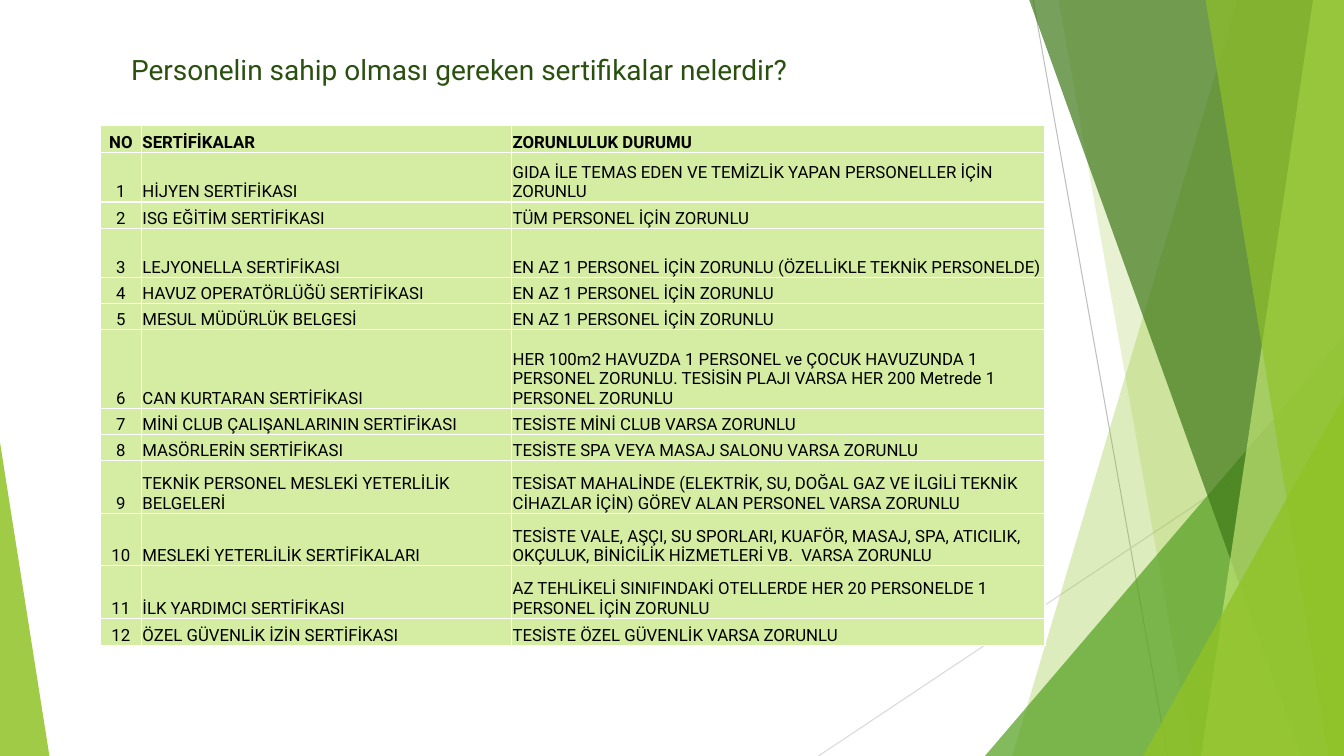
import lxml.etree
import pptx
import pptx.dml.color
import pptx.enum.shapes
import pptx.enum.text
import pptx.oxml.ns
import pptx.util

Pt = pptx.util.Pt
qn = pptx.oxml.ns.qn
PP_ALIGN = pptx.enum.text.PP_ALIGN
ANCHOR = pptx.enum.text.MSO_ANCHOR

WIDTH, HEIGHT = 960, 540
TOP = -0.6

CERTIFICATES = [
    ("NO", "SERTİFİKALAR", "ZORUNLULUK DURUMU", 19.4),
    ("1", "HİJYEN SERTİFİKASI",
     "GIDA İLE TEMAS EDEN VE TEMİZLİK YAPAN PERSONELLER İÇİN ZORUNLU", 35.3),
    ("2", "ISG EĞİTİM SERTİFİKASI", "TÜM PERSONEL İÇİN ZORUNLU", 18.7),
    ("3", "LEJYONELLA SERTİFİKASI",
     "EN AZ 1 PERSONEL İÇİN ZORUNLU (ÖZELLİKLE TEKNİK PERSONELDE)", 35.3),
    ("4", "HAVUZ OPERATÖRLÜĞÜ SERTİFİKASI", "EN AZ 1 PERSONEL İÇİN ZORUNLU", 18.7),
    ("5", "MESUL MÜDÜRLÜK BELGESİ", "EN AZ 1 PERSONEL İÇİN ZORUNLU", 18.7),
    ("6", "CAN KURTARAN SERTİFİKASI",
     "HER 100m2 HAVUZDA 1 PERSONEL ve ÇOCUK HAVUZUNDA 1 PERSONEL ZORUNLU. "
     "TESİSİN PLAJI VARSA HER 200 Metrede 1 PERSONEL ZORUNLU", 56.2),
    ("7", "MİNİ CLUB ÇALIŞANLARININ SERTİFİKASI",
     "TESİSTE MİNİ CLUB VARSA ZORUNLU", 18.7),
    ("8", "MASÖRLERİN SERTİFİKASI",
     "TESİSTE SPA VEYA MASAJ SALONU VARSA ZORUNLU", 18.7),
    ("9", "TEKNİK PERSONEL MESLEKİ YETERLİLİK BELGELERİ",
     "TESİSAT MAHALİNDE (ELEKTRİK, SU, DOĞAL GAZ VE İLGİLİ TEKNİK CİHAZLAR İÇİN) "
     "GÖREV ALAN PERSONEL VARSA ZORUNLU", 37.5),
    ("10", "MESLEKİ YETERLİLİK SERTİFİKALARI",
     "TESİSTE VALE, AŞÇI, SU SPORLARI, KUAFÖR, MASAJ, SPA, ATICILIK, OKÇULUK, "
     "BİNİCİLİK HİZMETLERİ VB.  VARSA ZORUNLU", 37.5),
    ("11", "İLK YARDIMCI SERTİFİKASI",
     "AZ TEHLİKELİ SINIFINDAKİ OTELLERDE HER 20 PERSONELDE 1 PERSONEL İÇİN ZORUNLU",
     37.5),
    ("12", "ÖZEL GÜVENLİK İZİN SERTİFİKASI", "TESİSTE ÖZEL GÜVENLİK VARSA ZORUNLU", 19.4),
]


def rgb(code):
    return pptx.dml.color.RGBColor.from_string(code)


def write(tf, text, size=12, color="000000", bold=False, align=PP_ALIGN.LEFT):
    p = tf.paragraphs[0]
    p.alignment = align
    r = p.add_run()
    r.text = text
    r.font.name = "Roboto"
    r.font.size = Pt(size)
    r.font.bold = bold
    r.font.color.rgb = rgb(color)


class Deck:
    """Hold the current slide and its green style."""

    green = "90C226"
    cell_fill = "D5EDA2"
    border = "FFFFFF"

    def __init__(self, slide):
        self.s = slide

    def line(self, x1, y1, x2, y2, color):
        kind = pptx.enum.shapes.MSO_CONNECTOR.STRAIGHT
        sp = self.s.shapes.add_connector(kind, Pt(x1), Pt(y1), Pt(x2), Pt(y2))
        sp.line.color.rgb = rgb(color)
        sp.line.width = Pt(0.75)
        lxml.etree.SubElement(sp._element.spPr, qn("a:effectLst"))

    def paint(self, sp, color, opacity):
        sp.shadow.inherit = False
        sp.line.fill.background()
        sp.fill.solid()
        sp.fill.fore_color.rgb = rgb(color)
        clr = sp._element.spPr.find(qn("a:solidFill"))[0]
        lxml.etree.SubElement(clr, qn("a:alpha"), val=str(opacity * 1000))

    def band(self, top_x, bottom_x, color, opacity):
        fb = self.s.shapes.build_freeform(Pt(top_x), Pt(TOP))
        corners = [(WIDTH, TOP), (WIDTH, HEIGHT), (bottom_x, HEIGHT)]
        fb.add_line_segments([(Pt(x), Pt(y)) for x, y in corners], close=True)
        self.paint(fb.convert_to_shape(), color, opacity)

    def triangle(self, left, top, right, apex, color, opacity):
        kind = pptx.enum.shapes.MSO_SHAPE.ISOSCELES_TRIANGLE
        sp = self.s.shapes.add_shape(
            kind, Pt(left), Pt(top), Pt(right - left), Pt(HEIGHT - top))
        sp.adjustments[0] = apex
        self.paint(sp, color, opacity)

    def title(self, text, left, top, width, height):
        sp = self.s.shapes.title
        sp.left, sp.top, sp.width, sp.height = map(Pt, (left, top, width, height))
        tf = sp.text_frame
        tf.word_wrap = True
        tf.auto_size = pptx.enum.text.MSO_AUTO_SIZE.SHAPE_TO_FIT_TEXT
        tf.vertical_anchor = ANCHOR.TOP
        write(tf, text, size=20, color="2A5010")

    def cell(self, cell, text, bold, align):
        cell.margin_left = cell.margin_right = cell.margin_top = Pt(0.7)
        cell.margin_bottom = 0
        cell.vertical_anchor = ANCHOR.BOTTOM
        tc_pr = cell._tc.get_or_add_tcPr()
        for side in ("a:lnL", "a:lnR", "a:lnT", "a:lnB"):
            ln = lxml.etree.SubElement(tc_pr, qn(side), w=str(Pt(1)))
            fill = lxml.etree.SubElement(ln, qn("a:solidFill"))
            lxml.etree.SubElement(fill, qn("a:srgbClr"), val=self.border)
        cell.fill.solid()
        cell.fill.fore_color.rgb = rgb(self.cell_fill)
        write(cell.text_frame, text, bold=bold, align=align)

    def table(self, left, top, widths, rows):
        frame = self.s.shapes.add_table(
            len(rows), len(widths), Pt(left), Pt(top),
            Pt(sum(widths)), Pt(sum(row[-1] for row in rows)))
        tbl = frame.table
        tbl.horz_banding = False
        for column, width in zip(tbl.columns, widths):
            column.width = Pt(width)
        for i, (*texts, height) in enumerate(rows):
            tbl.rows[i].height = Pt(height)
            for j, text in enumerate(texts):
                align = PP_ALIGN.LEFT if j else PP_ALIGN.CENTER
                self.cell(tbl.cell(i, j), text, i == 0, align)


def main():
    prs = pptx.Presentation()
    prs.slide_width, prs.slide_height = Pt(WIDTH), Pt(HEIGHT)
    deck = Deck(prs.slides.add_slide(prs.slide_layouts[5]))
    deck.line(738, 0, 834, HEIGHT, "BFBFBF")
    deck.line(WIDTH, 290, 584.6, HEIGHT, "D9D9D9")
    deck.band(884, 723, deck.green, 30)
    deck.band(756, 852, deck.green, 20)
    deck.triangle(703.5, 240, WIDTH, 1, "54A021", 72)
    deck.band(735, 929.5, "3F7819", 70)
    deck.band(938, 858, "C0E474", 70)
    deck.band(861, 949, deck.green, 65)
    deck.triangle(816.5, 283, WIDTH, 1, deck.green, 80)
    deck.triangle(0, 316, 35.3, 0, deck.green, 85)
    deck.title("Personelin sahip olması gereken sertifikalar nelerdir?",
               86.4, 33.8, 537, 31.7)
    deck.table(71.6, 89.6, [29.5, 264.4, 381], CERTIFICATES)
    prs.save("out.pptx")


if __name__ == "__main__":
    main()
